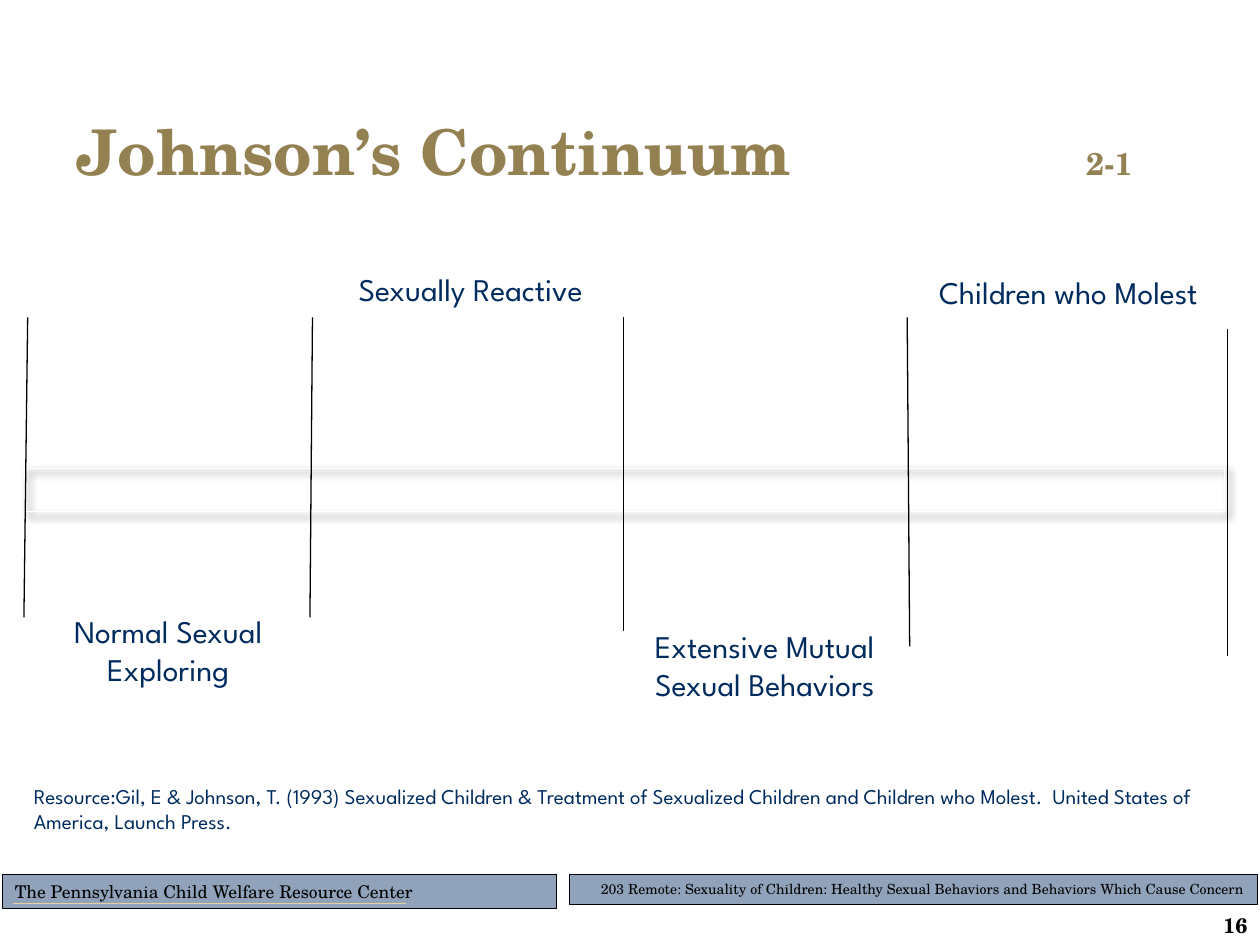
from lxml import etree
from pptx import Presentation
from pptx.dml.color import RGBColor
from pptx.enum.shapes import MSO_CONNECTOR as CONN, MSO_SHAPE as SHAPE
from pptx.enum.text import MSO_ANCHOR as ANCHOR, MSO_AUTO_SIZE as FIT, PP_ALIGN as ALIGN
from pptx.oxml import parse_xml
from pptx.oxml.ns import nsdecls, qn
from pptx.util import Inches, Pt

COLS, ROWS = 100, 75
COLORS = {"bar": "91A3BB", "ink": "000000", "rule": "E5D199",
          "title": "948151", "label": "002B5E", "white": "FFFFFF"}
SERIF, SANS = "TeX Gyre Schola", "League Spartan"

prs = Presentation()
prs.slide_width, prs.slide_height = Inches(10), Inches(7.5)


def rgb(key):
    return RGBColor.from_string(COLORS[key])


def place(box, x, y, w, h):
    """Turn grid units inside a box into slide lengths."""
    col, row = prs.slide_width / COLS, prs.slide_height / ROWS
    return (round((box[0] + x) * col), round((box[1] + y) * row),
            round(w * col), round(h * row))


def style(font, color, **fmt):
    for name, value in fmt.items():
        setattr(font, name, value)
    font.color.rgb = rgb(color)


def write(sp, text, color, align=ALIGN.LEFT, anchor=ANCHOR.TOP, fit=FIT.SHAPE_TO_FIT_TEXT, **fmt):
    tf = sp.text_frame
    for name, value in {"word_wrap": True, "auto_size": fit, "vertical_anchor": anchor}.items():
        setattr(tf, name, value)
    p = tf.paragraphs[0]
    p.alignment = align
    r = p.add_run()
    r.text = text
    style(r.font, color, **fmt)


def add_line(s, box, start, end, color="ink"):
    x1, y1, x2, y2 = place(box, *start, 0, 0)[:2] + place(box, *end, 0, 0)[:2]
    cn = s.shapes.add_connector(CONN.STRAIGHT, x1, y1, x2, y2)
    cn.line.color.rgb, cn.line.width = rgb(color), Pt(0.75)
    etree.SubElement(cn._element.spPr, qn("a:effectLst"))


def add_bar(s, box, size, text, width, align, points):
    sp = s.shapes.add_shape(SHAPE.RECTANGLE, *place(box, *size))
    sp.shadow.inherit = False
    sp.fill.solid()
    sp.fill.fore_color.rgb = rgb("bar")
    sp.line.color.rgb, sp.line.width = rgb("ink"), Pt(width)
    write(sp, text, "ink", align, name=SERIF, size=Pt(points))


def add_footer(s, box):
    add_bar(s, box, (45.2, 0, 54.6, 2.4),
            "203 Remote: Sexuality of Children: Healthy Sexual Behaviors "
            "and Behaviors Which Cause Concern", 0.75, ALIGN.RIGHT, 8)
    add_bar(s, box, (0.2, 0, 44, 2.7),
            "The Pennsylvania Child Welfare Resource Center", 0.5, ALIGN.LEFT, 10)
    add_line(s, box, (1, 2.3), (32.2, 2.3), "rule")
    number = s.shapes.add_textbox(*place(box, 88.9, 3, 11.1, 2.1))
    write(number, "16", "ink", ALIGN.RIGHT, ANCHOR.MIDDLE, FIT.NONE,
          name=SERIF, size=Pt(12), bold=True)


def add_title(s, box):
    sp = s.shapes.title
    sp.left, sp.top, sp.width, sp.height = place(box, 0, 0, *box[2:])
    tf = sp.text_frame
    tf.vertical_anchor, tf.auto_size = ANCHOR.MIDDLE, FIT.NONE
    p = tf.paragraphs[0]
    p.alignment = ALIGN.LEFT
    tabs = etree.SubElement(p._p.get_or_add_pPr(), qn("a:tabLst"))
    etree.SubElement(tabs, qn("a:tab"), pos=str(Inches(8.01)), algn="l")
    for text, points in (("Johnson’s Continuum\t", 36), ("2-1", 18)):
        r = p.add_run()
        r.text = text
        style(r.font, "title", name=SERIF, size=Pt(points), bold=True)


def add_scale(s, box, size):
    """Draw the one-cell table with white borders and a soft shadow."""
    table = s.shapes.add_table(1, 1, *place(box, *size)).table
    table.first_row = table.horz_banding = False
    tbl_pr = table._tbl.tblPr
    tbl_pr.find(qn("a:tableStyleId")).text = "{2D5ABB26-0587-4C30-8999-92F81FD0307C}"
    tbl_pr.insert(0, parse_xml(
        f'<a:effectLst {nsdecls("a")}><a:outerShdw blurRad="50800" dist="38100" dir="2700000" '
        'algn="tl" rotWithShape="0"><a:srgbClr val="000000"><a:alpha val="40000"/></a:srgbClr>'
        '</a:outerShdw></a:effectLst>'))
    cell = table.cell(0, 0)
    cell.text_frame.paragraphs[0].font.size = Pt(12)
    tc_pr = cell._tc.get_or_add_tcPr()
    for side in ("lnL", "lnR", "lnT", "lnB"):
        ln = etree.SubElement(tc_pr, qn(f"a:{side}"), w=str(Pt(1)))
        fill = etree.SubElement(ln, qn("a:solidFill"))
        etree.SubElement(fill, qn("a:srgbClr"), val=COLORS["white"])
    cell.fill.background()


def add_continuum(s, box):
    add_scale(s, box, (2, 16.2, 95.2, 3.4))
    for x1, y1, x2, y2 in ((24.8, 4.2, 24.6, 28), (2.2, 4.2, 1.9, 28), (49.5, 4.2, 49.5, 29.1),
                           (72, 4.2, 72.2, 30.3), (97.4, 5.1, 97.4, 31.1)):
        add_line(s, box, (x1, y1), (x2, y2))
    for text, *size in (("Sexually Reactive", 24.9, -0.1, 24.9, 4),
                        ("Children who Molest", 70.8, 0.2, 28, 4),
                        ("Normal Sexual Exploring", 1, 27.1, 24.7, 7.1),
                        ("Extensive Mutual Sexual Behaviors", 49.4, 28.3, 22.6, 7.1)):
        write(s.shapes.add_textbox(*place(box, *size)), text, "label", ALIGN.CENTER,
              name=SANS, size=Pt(18))


def add_resource(s, box):
    write(s.shapes.add_textbox(*place(box, 0, 0, *box[2:])),
          "Resource:Gil, E & Johnson, T. (1993) Sexualized Children & Treatment of Sexualized "
          "Children and Children who Molest.\u00a0 United States of America, Launch Press.",
          "label", name=SANS, size=Pt(12))


def main():
    s = prs.slides.add_slide(prs.slide_layouts[5])
    add_footer(s, (0, 69.4, 100, 5.6))
    add_title(s, (5.1, 8.7, 90, 6.5))
    add_continuum(s, (0, 21, 100, 36))
    add_resource(s, (1.7, 61.7, 96.7, 5))
    prs.save("out.pptx")


if __name__ == "__main__":
    main()
